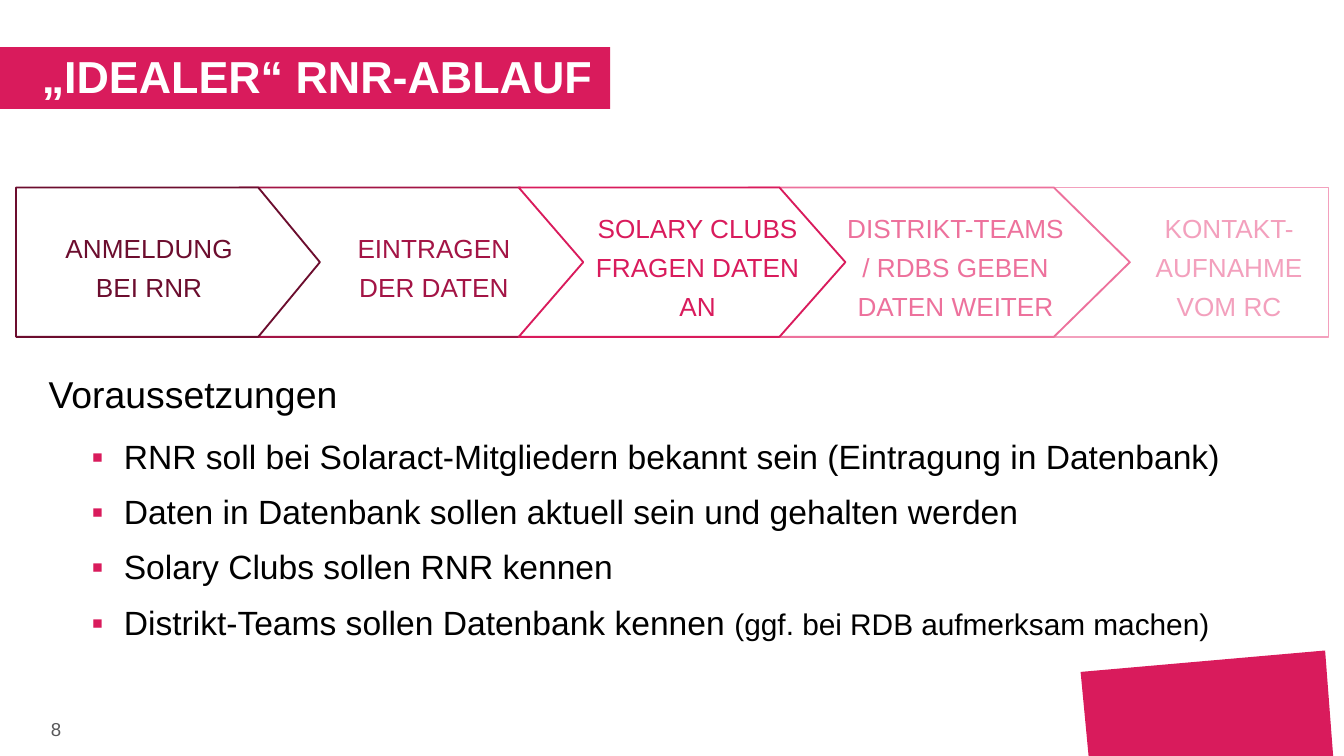
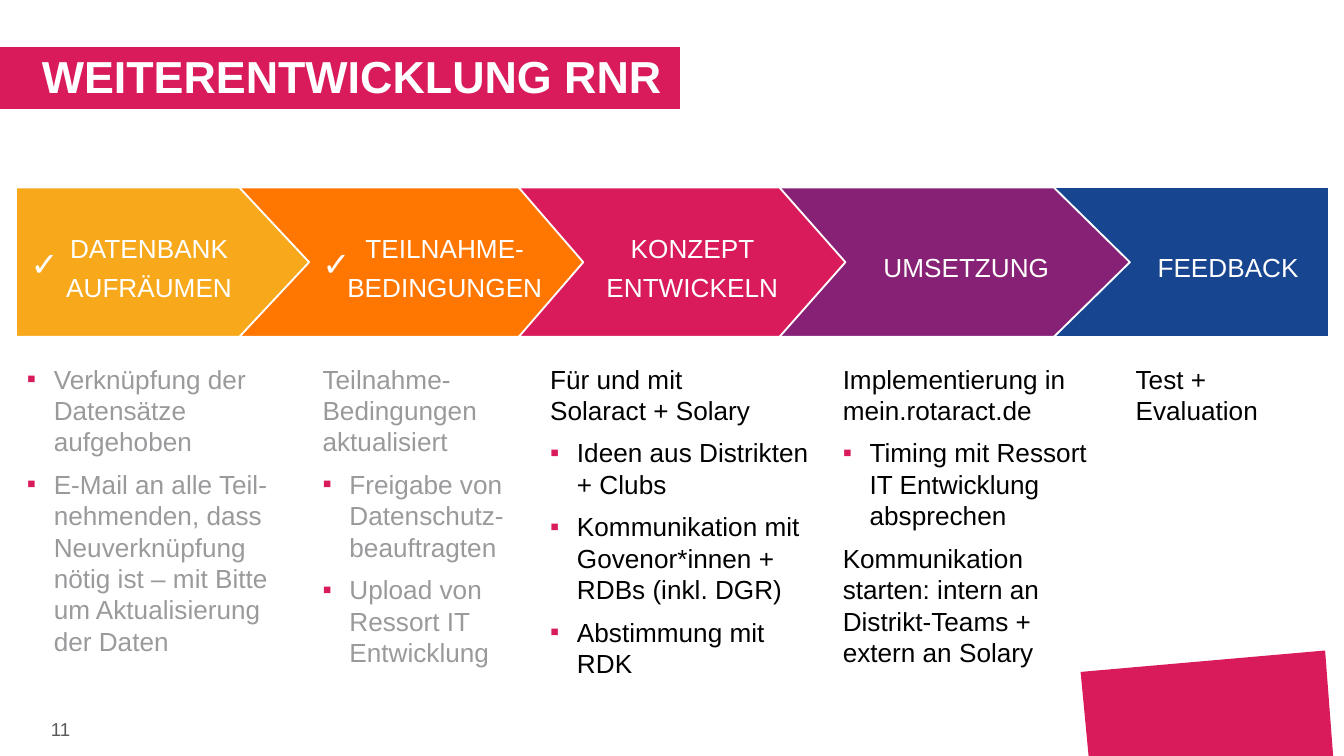
from dataclasses import dataclass
from typing import NamedTuple

from lxml.etree import SubElement
from pptx import Presentation
from pptx.dml.color import RGBColor
from pptx.enum.shapes import MSO_SHAPE
from pptx.enum.text import MSO_ANCHOR, MSO_AUTO_SIZE, PP_ALIGN
from pptx.oxml.ns import qn
from pptx.util import Pt

FONT = "Arial"
COLORS = {
    "cranberry": "D91B5C",
    "wine": "6C0D2E",
    "ruby": "A31445",
    "rose": "ED719C",
    "blush": "F3A0BD",
    "gold": "F7A81B",
    "orange": "FF7600",
    "violet": "872175",
    "royal": "17458F",
    "white": "FFFFFF",
    "black": "000000",
    "done": "9A9A9D",
    "page": "58585A",
}
CORNER_BLOCK = [(709.9, 348.5), (714.2, 405), (583.2, 405), (578.9, 360)]
BAND_TOP, BAND_HEIGHT = 100.5, 80
BAND_MIDDLE = BAND_TOP + BAND_HEIGHT / 2
LABEL_PADDING, LABEL_LINE = 5.4, 21.2
TIGHT_INSETS = (5.8, 2.9)
NORMAL_INSETS = (7.2, 3.6)
COLUMN_TOP, COLUMN_HEIGHT = 191.5, 178


class Span(NamedTuple):
    text: str
    size: float = 14


class Para(NamedTuple):
    spans: tuple[Span, ...]
    indent: float = 0
    hanging: float = 0
    after: float = 0
    line_spacing: float = 1.0


class Arrow(NamedTuple):
    """Horizontal stops of one process arrow; an end arrow has no tip."""
    left: float
    shoulder: float
    tip: float
    notch: float


@dataclass(frozen=True)
class Step:
    label: str
    lines: int
    color: str
    label_left: float
    label_width: float = 123.8


@dataclass(frozen=True)
class Column:
    left: float
    width: float
    color: str
    paras: tuple[Para, ...]


ARROWS = [
    Arrow(8.6, 138.4, 171.4, 8.6),
    Arrow(128.2, 278.6, 316, 165.6),
    Arrow(277.9, 417.6, 452.9, 312.5),
    Arrow(401, 564.6, 605.3, 442),
    Arrow(559.4, 711.8, 711.8, 559.4),
]


def rgb(color: str) -> RGBColor:
    return RGBColor.from_string(COLORS[color])


def note(text: str) -> Para:
    return Para((Span(text),), after=6)


def task(text: str) -> Para:
    return Para((Span(text),), 14.4, 14.4, after=6)


def requirement(*spans: Span) -> Para:
    return Para(spans, 40.3, 17.3, 9.6, 0.93)


IDEAL_STEPS = [
    Step("ANMELDUNG BEI RNR", 2, "wine", 18),
    Step("EINTRAGEN DER DATEN", 2, "ruby", 170.6),
    Step("SOLARY CLUBS FRAGEN DATEN AN", 3, "cranberry", 311.8),
    Step("DISTRIKT-TEAMS / RDBS GEBEN DATEN WEITER", 3, "rose", 445, 133.9),
    Step("KONTAKT-AUFNAHME VOM RC", 3, "blush", 600.5, 115.9),
]
REQUIREMENTS = [
    Para((Span("Voraussetzungen", 20),), after=12, line_spacing=0.93),
    requirement(Span("RNR soll bei Solaract-Mitgliedern bekannt sein "
                     "(Eintragung in Datenbank)", 18)),
    requirement(Span("Daten in Datenbank sollen aktuell sein und gehalten werden", 18)),
    requirement(Span("Solary Clubs sollen RNR kennen", 18)),
    requirement(Span("Distrikt-Teams sollen Datenbank kennen ", 18),
                Span("(ggf. bei RDB aufmerksam machen)", 16)),
]
ROADMAP_STEPS = [
    Step("DATENBANK AUFRÄUMEN", 2, "gold", 18),
    Step("TEILNAHME-BEDINGUNGEN", 2, "orange", 176.4),
    Step("KONZEPT ENTWICKELN", 2, "cranberry", 309),
    Step("UMSETZUNG", 1, "violet", 455.8),
    Step("FEEDBACK", 1, "royal", 608, 100),
]
ROADMAP_COLUMNS = [
    Column(8.6, 152.6, "done", (
        task("Verknüpfung der Datensätze aufgehoben"),
        task("E-Mail an alle Teil-nehmenden, dass Neuverknüpfung nötig ist "
             "– mit Bitte um Aktualisierung der Daten"),
    )),
    Column(167, 123, "done", (
        note("Teilnahme-Bedingungen aktualisiert"),
        task("Freigabe von Datenschutz-beauftragten"),
        task("Upload von Ressort IT Entwicklung"),
    )),
    Column(288.9, 156.2, "black", (
        note("Für und mit\nSolaract + Solary"),
        task("Ideen aus Distrikten + Clubs"),
        task("Kommunikation mit Govenor*innen + RDBs (inkl. DGR)"),
        task("Abstimmung mit RDK"),
    )),
    Column(445.7, 146.9, "black", (
        note("Implementierung in mein.rotaract.de"),
        task("Timing mit Ressort IT Entwicklung absprechen"),
        note("Kommunikation starten: intern an Distrikt-Teams + extern an Solary"),
    )),
    Column(602.6, 101.5, "black", (note("Test +\nEvaluation"),)),
]


def add_bullet(paragraph, indent: float, hanging: float) -> None:
    properties = paragraph._p.get_or_add_pPr()
    properties.set("marL", str(Pt(indent)))
    properties.set("indent", str(-Pt(hanging)))
    color = SubElement(properties, qn("a:buClr"))
    SubElement(color, qn("a:srgbClr"), val=COLORS["cranberry"])
    SubElement(properties, qn("a:buFont"), typeface=FONT)
    SubElement(properties, qn("a:buChar"), char="▪")


def add_span(paragraph, span: Span, color: str, bold: bool = False) -> None:
    for number, line in enumerate(span.text.split("\n")):
        if number:
            paragraph.add_line_break()
        run = paragraph.add_run()
        run.text = line
        run.font.name = FONT
        run.font.size = Pt(span.size)
        run.font.bold = bold
        run.font.color.rgb = rgb(color)


def add_text(slide, left: float, top: float, width: float, height: float,
             paras, color: str, insets: tuple[float, float] = NORMAL_INSETS,
             align: PP_ALIGN = PP_ALIGN.LEFT) -> None:
    frame = slide.shapes.add_textbox(
        Pt(left), Pt(top), Pt(width), Pt(height)).text_frame
    frame.word_wrap = True
    frame.margin_left = frame.margin_right = Pt(insets[0])
    frame.margin_top = frame.margin_bottom = Pt(insets[1])
    for number, para in enumerate(paras):
        paragraph = frame.add_paragraph() if number else frame.paragraphs[0]
        if para.hanging:
            add_bullet(paragraph, para.indent, para.hanging)
        paragraph.alignment = align
        paragraph.line_spacing = para.line_spacing
        paragraph.space_after = Pt(para.after)
        for span in para.spans:
            add_span(paragraph, span, color)


def add_outline(slide, points, fill: str, line: str | None = None) -> None:
    corners = [(Pt(x), Pt(y)) for x, y in points]
    builder = slide.shapes.build_freeform(*corners[0])
    builder.add_line_segments(corners[1:], close=True)
    paint(builder.convert_to_shape(), fill, line)


def paint(shape, fill: str, line: str | None) -> None:
    shape.shadow.inherit = False
    shape.fill.solid()
    shape.fill.fore_color.rgb = rgb(fill)
    if line:
        shape.line.color.rgb = rgb(line)
        shape.line.width = Pt(1)
    else:
        shape.line.fill.background()


def add_arrow(slide, arrow: Arrow, fill: str, line: str) -> None:
    bottom = BAND_TOP + BAND_HEIGHT
    if arrow.tip == arrow.shoulder:
        end = slide.shapes.add_shape(
            MSO_SHAPE.RECTANGLE, Pt(arrow.left), Pt(BAND_TOP),
            Pt(arrow.tip - arrow.left), Pt(BAND_HEIGHT))
        paint(end, fill, line)
        return
    points = [(arrow.left, BAND_TOP), (arrow.shoulder, BAND_TOP),
              (arrow.tip, BAND_MIDDLE), (arrow.shoulder, bottom),
              (arrow.left, bottom)]
    if arrow.notch > arrow.left:
        points.append((arrow.notch, BAND_MIDDLE))
    add_outline(slide, points, fill, line)


def add_process(slide, steps: list[Step], stacking: tuple[int, ...],
                filled: bool) -> None:
    """Draw the arrows in stacking order, back to front, then their labels."""
    for index in stacking:
        color = steps[index].color
        fill, line = (color, "white") if filled else ("white", color)
        add_arrow(slide, ARROWS[index], fill, line)
    for step in steps:
        height = LABEL_PADDING + step.lines * LABEL_LINE
        add_text(slide, step.label_left, BAND_MIDDLE - height / 2,
                 step.label_width, height,
                 [Para((Span(step.label),), line_spacing=1.25)],
                 "white" if filled else step.color, align=PP_ALIGN.CENTER)


def add_titled_slide(deck, title: str, title_width: float, page: int):
    slide = deck.slides.add_slide(deck.slide_layouts[5])
    add_outline(slide, CORNER_BLOCK, "cranberry")
    add_text(slide, 20.2, 380.9, 71.3, 24.5, [Para((Span(str(page), 10),))], "page")
    banner = slide.shapes.title
    banner.left, banner.top = Pt(0), Pt(25.2)
    banner.width, banner.height = Pt(title_width), Pt(33.2)
    banner.fill.solid()
    banner.fill.fore_color.rgb = rgb("cranberry")
    frame = banner.text_frame
    frame.auto_size = MSO_AUTO_SIZE.NONE
    frame.word_wrap = True
    frame.vertical_anchor = MSO_ANCHOR.MIDDLE
    frame.margin_left, frame.margin_right = Pt(22.4), Pt(5.8)
    frame.margin_top = frame.margin_bottom = Pt(2.9)
    heading = frame.paragraphs[0]
    heading.alignment = PP_ALIGN.LEFT
    heading.line_spacing = 0.93
    add_span(heading, Span(title, 24), "white", bold=True)
    return slide


def build_ideal_process(deck) -> None:
    slide = add_titled_slide(deck, "„IDEALER“ RNR-ABLAUF", 326.9, 8)
    add_process(slide, IDEAL_STEPS, (1, 0, 4, 3, 2), filled=False)
    add_text(slide, 20.2, 198, 680.4, 180.7, REQUIREMENTS, "black", TIGHT_INSETS)


def build_roadmap(deck) -> None:
    slide = add_titled_slide(deck, "WEITERENTWICKLUNG RNR", 364.3, 11)
    add_process(slide, ROADMAP_STEPS, (4, 0, 1, 3, 2), filled=True)
    for column in ROADMAP_COLUMNS:
        add_text(slide, column.left, COLUMN_TOP, column.width, COLUMN_HEIGHT,
                 column.paras, column.color, TIGHT_INSETS)
    for check_left in (9.4, 165.6):
        add_text(slide, check_left, 126.7, 40.3, 28.8,
                 [Para((Span("✓", 18),))], "white")


def main() -> None:
    deck = Presentation()
    deck.slide_width, deck.slide_height = Pt(720), Pt(405)
    build_ideal_process(deck)
    build_roadmap(deck)
    deck.save("out.pptx")


if __name__ == "__main__":
    main()
